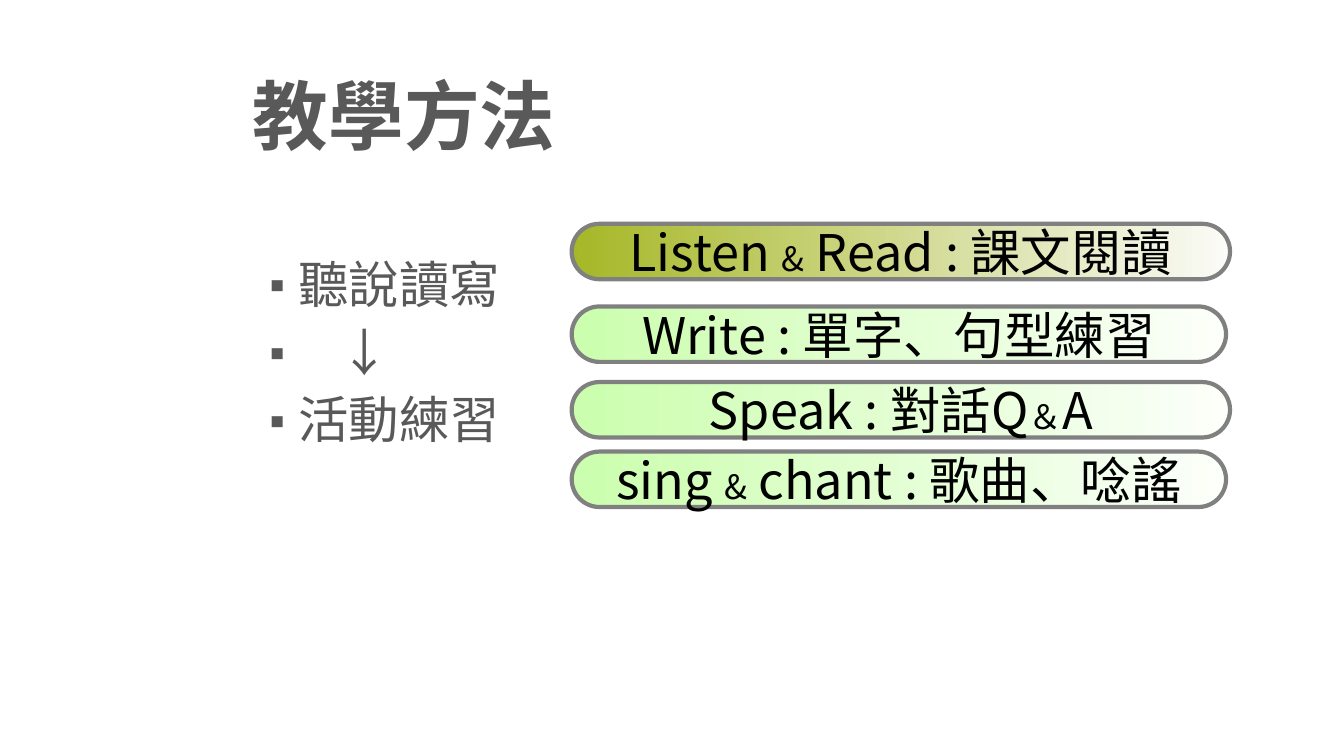
from pptx import Presentation
from pptx.dml.color import RGBColor
from pptx.enum.shapes import MSO_SHAPE
from pptx.enum.text import MSO_ANCHOR, PP_ALIGN
from pptx.oxml.ns import qn
from pptx.util import Inches, Pt
from lxml.etree import SubElement

FONT = "Noto Sans CJK TC"
COLORS = {
    "text": "595959",
    "pill_text": "000000",
    "outline": "808080",
    "olive": ("A6B727", "FBFBF8"),
    "green": ("CBFEAE", "FCFFFA"),
}


def rgb(value):
    return RGBColor.from_string(value)


def add_run(p, text, size, color, bold=False):
    r = p.add_run()
    r.text = text
    r.font.size = Pt(size)
    r.font.name = FONT
    r.font.bold = bold
    r.font.color.rgb = rgb(color)
    SubElement(r.font._element, qn("a:ea"), typeface=FONT)


def add_text_box(s, left, top, width, height, anchor):
    sp = s.shapes.add_textbox(Inches(left), Inches(top), Inches(width), Inches(height))
    tf = sp.text_frame
    tf.word_wrap = True
    tf.vertical_anchor = anchor
    return tf


def add_title(s, left, top, width, height):
    tf = add_text_box(s, left, top, width, height, MSO_ANCHOR.BOTTOM)
    p = tf.paragraphs[0]
    p.line_spacing = 0.9
    add_run(p, "教學方法", 54, COLORS["text"], bold=True)


def set_bullet(p, text_indent, bullet_indent=0.05):
    pPr = p._p.get_or_add_pPr()
    pPr.set("marL", str(Inches(text_indent)))
    pPr.set("indent", str(Inches(bullet_indent) - Inches(text_indent)))
    SubElement(pPr, qn("a:buSzPct"), val="80000")
    SubElement(pPr, qn("a:buFont"), typeface=FONT)
    SubElement(pPr, qn("a:buChar"), char="▪")


def add_skills(s, left, top, width, height):
    tf = add_text_box(s, left, top, width, height, MSO_ANCHOR.TOP)
    items = [("聽說讀寫", 0.3), ("↓", 0.86), ("活動練習", 0.3)]
    for i, (text, indent) in enumerate(items):
        p = tf.add_paragraph() if i else tf.paragraphs[0]
        set_bullet(p, indent)
        p.line_spacing = 0.9
        p.space_before = Pt(9.5 if i else 0)
        add_run(p, text, 36, COLORS["text"])


def add_pill(s, left, top, width, height, gradient, parts):
    sp = s.shapes.add_shape(MSO_SHAPE.ROUNDED_RECTANGLE, Inches(left), Inches(top),
                            Inches(width), Inches(height))
    sp.adjustments[0] = 0.5
    sp.shadow.inherit = False
    sp.fill.gradient()
    sp.fill.gradient_angle = 0
    for stop, color in zip(sp.fill.gradient_stops, COLORS[gradient]):
        stop.color.rgb = rgb(color)
    sp.line.color.rgb = rgb(COLORS["outline"])
    sp.line.width = Pt(3)
    tf = sp.text_frame
    tf.word_wrap = False
    tf.vertical_anchor = MSO_ANCHOR.MIDDLE
    p = tf.paragraphs[0]
    p.alignment = PP_ALIGN.CENTER
    for text in parts:
        add_run(p, text, 24 if text in "&＆" else 36, COLORS["pill_text"])


def add_methods(s, left, top):
    pills = [
        (0, 6.53, "olive", ["Listen ", "&", " Read : 課文閱讀"]),
        (0.82, 6.49, "green", ["Write : 單字、句型練習"]),
        (1.57, 6.53, "green", ["Speak : 對話Q", "＆", "A"]),
        (2.26, 6.49, "green", ["sing ", "&", " chant : 歌曲、唸謠"]),
    ]
    for offset, width, gradient, parts in pills:
        add_pill(s, left, top + offset, width, 0.55, gradient, parts)


def main():
    prs = Presentation()
    prs.slide_width, prs.slide_height = Inches(13.33), Inches(7.5)
    s = prs.slides.add_slide(prs.slide_layouts[6])
    add_title(s, 2.41, 0.33, 10.25, 1.31)
    add_skills(s, 2.41, 2.53, 3.1, 3.72)
    add_methods(s, 5.67, 2.22)
    prs.save("out.pptx")


if __name__ == "__main__":
    main()
